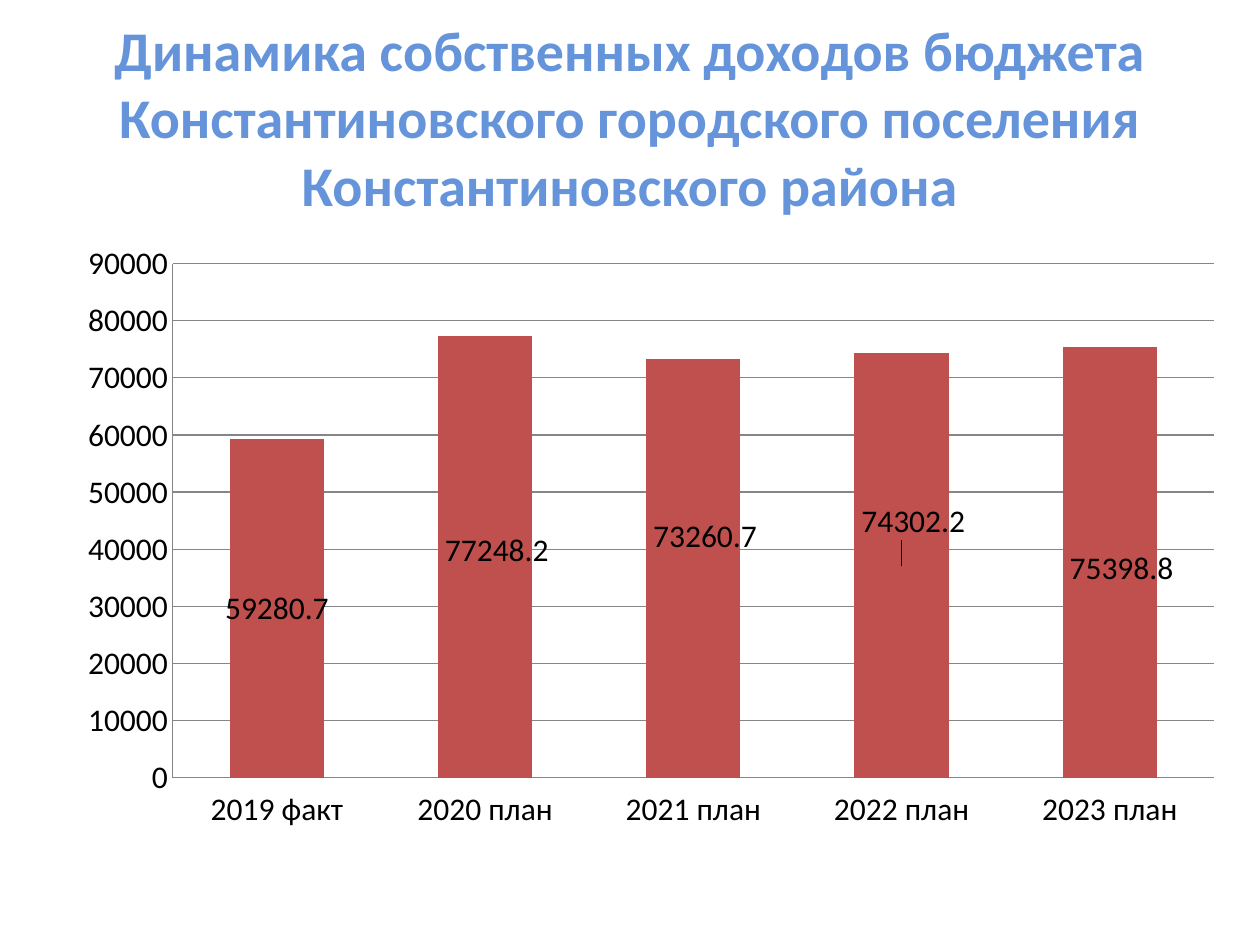
from lxml import etree
from pptx import Presentation
from pptx.chart.data import CategoryChartData
from pptx.dml.color import RGBColor
from pptx.enum.chart import XL_CHART_TYPE, XL_LABEL_POSITION, XL_TICK_LABEL_POSITION, XL_TICK_MARK
from pptx.enum.text import MSO_ANCHOR, PP_ALIGN
from pptx.oxml import parse_xml
from pptx.oxml.ns import nsdecls, qn
from pptx.util import Inches, Pt

STACKED = XL_CHART_TYPE.COLUMN_STACKED
CENTER_LABEL = XL_LABEL_POSITION.CENTER
LOW = XL_TICK_LABEL_POSITION.LOW
NO_TICK = XL_TICK_MARK.NONE
MIDDLE = MSO_ANCHOR.MIDDLE
CENTER = PP_ALIGN.CENTER
FONT = "Calibri"
COLORS = {"title": "6594DA", "bar": "C0504D", "text": "000000", "line": "868686"}


def style_font(font, size, color):
    font.name = FONT
    font.size = Pt(size)
    font.color.rgb = RGBColor.from_string(COLORS[color])


def manual_layout(**values):
    layout = parse_xml(f"<c:layout {nsdecls('c')}><c:manualLayout/></c:layout>")
    for tag, value in values.items():
        etree.SubElement(layout[0], qn(f"c:{tag}")).set("val", str(value))
    return layout


prs = Presentation()
prs.slide_width = Inches(10)
prs.slide_height = Inches(7.5)
slide = prs.slides.add_slide(prs.slide_layouts[6])

title = slide.shapes.add_textbox(Inches(0.5), Inches(0.3), Inches(9), Inches(1.25)).text_frame
title.word_wrap = True
title.vertical_anchor = MIDDLE
title.text = "Динамика собственных доходов бюджета Константиновского городского поселения Константиновского района"
heading = title.paragraphs[0]
heading.alignment = CENTER
style_font(heading.runs[0].font, 32, "title")
heading.runs[0].font.bold = True

revenue = CategoryChartData()
revenue.categories = ["2019 факт", "2020 план", "2021 план", "2022 план", "2023 план"]
revenue.add_series("Series 1", [59280.7, 77248.2, 73260.7, 74302.2, 75398.8])
chart = slide.shapes.add_chart(
    STACKED, Inches(0.35), Inches(1.94), Inches(9.29), Inches(5.04), revenue
).chart
chart.has_title = False
chart.has_legend = False
style_font(chart.font, 18, "text")

years, amounts = chart.category_axis, chart.value_axis
years.tick_label_position = LOW
amounts.minimum_scale = 0
amounts.maximum_scale = 90000
amounts.major_unit = 10000
amounts.has_major_gridlines = True
for axis in (years, amounts):
    axis.major_tick_mark = NO_TICK
    axis.minor_tick_mark = NO_TICK
for line in (years.format.line, amounts.format.line, amounts.major_gridlines.format.line):
    line.width = Pt(0.75)
    line.color.rgb = RGBColor.from_string(COLORS["line"])

plot = chart.plots[0]
plot.gap_width = 121
plot.overlap = 100
plot.vary_by_categories = False
bars = plot.series[0]
bars.format.fill.solid()
bars.format.fill.fore_color.rgb = RGBColor.from_string(COLORS["bar"])

labels = bars.data_labels
labels.show_value = True
labels.position = CENTER_LABEL
style_font(labels.font, 18, "text")
label_shifts = {1: (0.01, -0.01), 2: (0.01, -0.05), 3: (0.01, -0.07), 4: (0.01, 0.01)}
for index, (dx, dy) in label_shifts.items():
    label = bars.points[index].data_label
    label.position = CENTER_LABEL
    style_font(label.font, 18, "text")
for node in chart.element.iter(qn("c:dLbl")):
    index_node = node.find(qn("c:idx"))
    dx, dy = label_shifts[int(index_node.get("val"))]
    index_node.addnext(manual_layout(x=dx, y=dy))

plot_area = chart.element.find(".//" + qn("c:plotArea"))
for old_layout in plot_area.findall(qn("c:layout")):
    plot_area.remove(old_layout)
plot_area.insert(0, manual_layout(
    layoutTarget="inner", xMode="edge", yMode="edge", x=0.11, y=0.03, w=0.89, h=0.81
))

prs.save("out.pptx")
